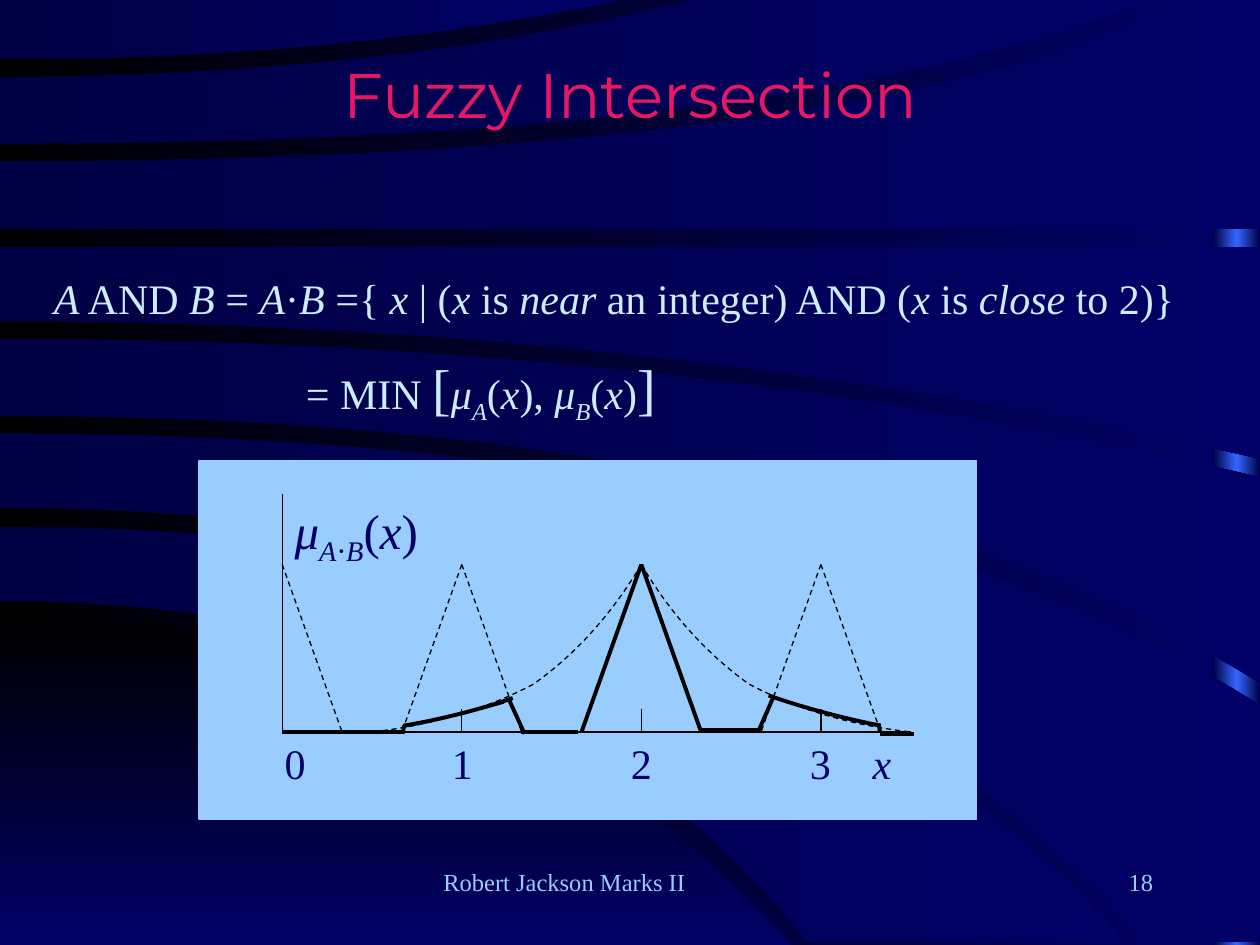
from copy import deepcopy
from lxml import etree
from pptx import Presentation
from pptx.dml.color import RGBColor
from pptx.enum.dml import MSO_LINE
from pptx.enum.shapes import MSO_CONNECTOR, MSO_SHAPE
from pptx.enum.text import PP_ALIGN
from pptx.oxml.ns import qn
from pptx.util import Inches, Pt

DASH = MSO_LINE.DASH
STRAIGHT = MSO_CONNECTOR.STRAIGHT
LEFT, CENTER, RIGHT = PP_ALIGN.LEFT, PP_ALIGN.CENTER, PP_ALIGN.RIGHT
BLACK = RGBColor(0x00, 0x00, 0x00)
NAVY = RGBColor(0x00, 0x00, 0x66)
DARK_NAVY = RGBColor(0x00, 0x00, 0x44)
BLUE = RGBColor(0x33, 0x66, 0xFF)
SKY = RGBColor(0x99, 0xCC, 0xFF)
PALE = RGBColor(0xCC, 0xEC, 0xFF)
PINK = RGBColor(0xE8, 0x17, 0x66)
SERIF = "Times New Roman"

deck = Presentation()
deck.slide_width, deck.slide_height = Inches(10), Inches(7.5)
CELL = deck.slide_width // 100  # the slide is a grid of 100 columns and 75 rows
page = deck.slides.add_slide(deck.slide_layouts[6])


def paint_gradient(fill, colors, angle=0):
    fill.gradient()
    fill.gradient_angle = angle
    for stop, color, place in zip(fill.gradient_stops, colors, (0, 1)):
        stop.color.rgb, stop.position = color, place


def draw_curve(points, close):
    """Draw quadratic arcs through end, control, end, control, ... in grid cells."""
    points = [(x * CELL, y * CELL) for x, y in points]
    vertices = []
    for start, control, end in zip(points[::2], points[1::2], points[2::2]):
        for anchor in (start, end):
            vertices.append(tuple(round((a + 2 * c) / 3) for a, c in zip(anchor, control)))
        vertices.append(tuple(round(n) for n in end))
    builder = page.shapes.build_freeform(*(round(n) for n in points[0]))
    builder.add_line_segments(vertices, close=close)
    shape = builder.convert_to_shape()
    shape.shadow.inherit = False
    # Every three vertices become the controls and end of one cubic segment
    outline = shape.element.find(".//" + qn("a:path"))
    steps = outline.findall(qn("a:lnTo"))
    for first in range(0, 3 * (len(points) // 2), 3):
        cubic = etree.SubElement(outline, qn("a:cubicBezTo"))
        for step in steps[first:first + 3]:
            cubic.append(step[0])
            outline.remove(step)
    for ending in outline.findall(qn("a:close")):
        outline.append(ending)
    return shape


# Background: sweeping bands over a dark gradient, with a bright strip at the right
paint_gradient(page.background.fill, (BLACK, NAVY))
strip = page.shapes.add_shape(MSO_SHAPE.RECTANGLE, round(96.3 * CELL), 0, round(3.7 * CELL), 75 * CELL)
strip.shadow.inherit = False
strip.line.fill.background()
paint_gradient(strip.fill, (DARK_NAVY, DARK_NAVY))
stops = strip.element.find(".//" + qn("a:gsLst"))
stops.insert(1, deepcopy(stops[0]))
middle = strip.fill.gradient_stops[1]
middle.color.rgb, middle.position = BLUE, 0.5

# Upper and lower edge of each band: y at the left, x of the control, end point
CORNER = ((49.1, 40.4, 62.8, 75), (75, 40, 62.8, 75))
BANDS = [
    CORNER,
    ((41.8, 60, 89.3, 74.8), (47.7, 42.5, 64.2, 74.8)),
    ((34.4, 66, 100, 56), (40.3, 60, 90.9, 74.8)),
    ((26.9, 54, 100, 37.9), (33, 66, 100, 54.2)),
    ((19.6, 50, 100, 19.6), (25.5, 52, 100, 36.4)),
    ((12.8, 69, 94, 0), (18.2, 50, 100, 18.2)),
    ((6.1, 31, 55, 0), (11.4, 63, 91.3, 0)),
    ((0, 25, 49.2, 0), (4.7, 27, 49.2, 0)),
]
for upper, lower in BANDS:
    (top, bend, *top_end), (bottom, low_bend, *bottom_end) = upper, lower
    nearer, farther = sorted((top_end, bottom_end), key=lambda end: end[0])
    corner = (farther[0], nearer[1])
    band = draw_curve([(0, top), (bend, top), top_end, corner, corner, bottom_end, bottom_end,
                       (low_bend, bottom), (0, bottom)], close=True)
    band.line.fill.background()
    if upper is CORNER[0]:
        paint_gradient(band.fill, (BLACK, NAVY), 270)
    else:
        paint_gradient(band.fill, (DARK_NAVY, NAVY))

panel = page.shapes.add_shape(MSO_SHAPE.RECTANGLE, *(round(n * CELL) for n in (15.8, 36.6, 61.7, 28.4)))
panel.shadow.inherit = False
panel.fill.solid()
panel.fill.fore_color.rgb = panel.line.color.rgb = SKY
panel.line.width = Pt(0.75)

# Text: spans are (text, style) with i for italic, s for subscript, b for a big bracket
PLAIN, ITALIC, SUB, BIG = "", "i", "is", "b"
SET = [("A", ITALIC), (" AND ", PLAIN), ("B", ITALIC), (" = ", PLAIN), ("A", ITALIC), ("·", PLAIN),
       ("B", ITALIC), (" ={ ", PLAIN), ("x", ITALIC), (" | (", PLAIN), ("x", ITALIC), (" is ", PLAIN),
       ("near", ITALIC), (" an integer) AND (", PLAIN), ("x", ITALIC), (" is ", PLAIN),
       ("close", ITALIC), (" to 2)}", PLAIN)]
ARGUMENT = [("(", PLAIN), ("x", ITALIC), (")", PLAIN)]
MINIMUM = [("= MIN ", PLAIN), ("[", BIG), ("μ", ITALIC), ("A", SUB), *ARGUMENT, (", ", PLAIN),
           ("μ", ITALIC), ("B", SUB), *ARGUMENT, ("]", BIG)]
MEMBERSHIP = [("μ", ITALIC), ("A⋅B", SUB), *ARGUMENT]
AXIS_LABELS = [("0\t1\t2\t3\t", PLAIN), ("x", ITALIC)]
BOXES = [  # left, top, width, height, font, size, color, alignment, paragraphs
    (34.2, 68.3, 31.7, 5, SERIF, 14, SKY, LEFT, [[("Robert Jackson Marks II", PLAIN)]]),
    (71.7, 68.3, 20.8, 5, SERIF, 14, SKY, RIGHT, [[("18", PLAIN)]]),
    (6.6, 3.9, 86.9, 12.5, "Montserrat", 36, PINK, CENTER, [[("Fuzzy Intersection", PLAIN)]]),
    (3.3, 21.1, 91.7, 13, SERIF, 24, PALE, LEFT, [SET, MINIMUM]),
    (20, 58, 54.2, 4.5, SERIF, 24, NAVY, LEFT, [AXIS_LABELS]),
    (22.4, 39.2, 13.9, 4.5, SERIF, 28, NAVY, LEFT, [MEMBERSHIP]),
]
for *place, font, size, color, alignment, paragraphs in BOXES:
    box = page.shapes.add_textbox(*(round(n * CELL) for n in place))
    frame = box.text_frame
    frame.word_wrap = True
    for index, spans in enumerate(paragraphs):
        para = frame.add_paragraph() if index else frame.paragraphs[0]
        para.alignment = alignment
        for text, style in spans:
            span = para.add_run()
            span.text = text
            span.font.name, span.font.size = font, Pt(32 if style == BIG else size)
            span.font.color.rgb, span.font.italic = color, "i" in style
            if style == SUB:
                span.font._element.set("baseline", "-25000")
        if spans is MINIMUM:
            para.space_before = Pt(18)
            para._p.get_or_add_pPr().set("marL", str(20 * CELL))
        if spans is AXIS_LABELS:
            frame.margin_left = round(2.6 * CELL)
            tabs = etree.SubElement(para._p.get_or_add_pPr(), qn("a:tabLst"))
            for position in (14.1, 28.3, 42.5, 47.4):
                etree.SubElement(tabs, qn("a:tab"), pos=str(round(position * CELL)), algn="ctr")

# Graph: x runs over the integers, y from 0 at the axis to 1 at the peaks
ORIGIN, UNIT, BASE, PEAK = 22.4, 14.25, 58.1, 13.3
THIN, THICK = 0.75, 2.25
LINES = [(0, 0, 3.5, 0, THIN, None), (0, 0, 0, 1.42, THIN, None)]
LINES += [(n, 0, n, 0.14, THIN, None) for n in (1, 2, 3)]
for n in range(4):
    weight, dash = (THICK, None) if n == 2 else (THIN, DASH)
    LINES += [(n, 1, n + side / 3, 0, weight, dash) for side in (-1, 1) if n + side > -1]
LINES += [(*ends, THICK, None) for ends in (
    (0, 0, 0.67, 0), (0.67, -0.01, 0.68, 0.04), (1.26, 0.2, 1.35, -0.01), (1.33, 0, 1.65, 0),
    (2.34, 0.01, 2.67, 0.01), (2.74, 0.22, 2.65, 0), (3.33, 0, 3.32, 0.05), (3.33, -0.01, 3.52, -0.01))]
for x1, y1, x2, y2, weight, dash in LINES:
    ends = (ORIGIN + x1 * UNIT, BASE - y1 * PEAK, ORIGIN + x2 * UNIT, BASE - y2 * PEAK)
    line = page.shapes.add_connector(STRAIGHT, *(round(n * CELL) for n in ends))
    line.line.color.rgb, line.line.width, line.line.dash_style = BLACK, Pt(weight), dash
    etree.SubElement(line.element.spPr, qn("a:effectLst"))

BELL = [(0, 44.8), (3.5, 50.7), (8.55, 54.3), (14.2, 57.3), (21.4, 58.1)]
CURVES = [([(50.9 + side * x, y) for x, y in BELL], THIN, DASH) for side in (-1, 1)]
CURVES += [
    ([(32.1, 57.6), (37, 56.7), (40.7, 55.4)], THICK, None),
    ([(32, 57.5), (36.5, 56.8), (40, 55.8)], THIN, None),
    ([(69.9, 57.6), (65, 56.6), (61, 55.2)], THICK, None),
]
for points, weight, dash in CURVES:
    curve = draw_curve(points, close=False)
    curve.fill.background()
    curve.line.color.rgb, curve.line.width, curve.line.dash_style = BLACK, Pt(weight), dash

deck.save("out.pptx")
